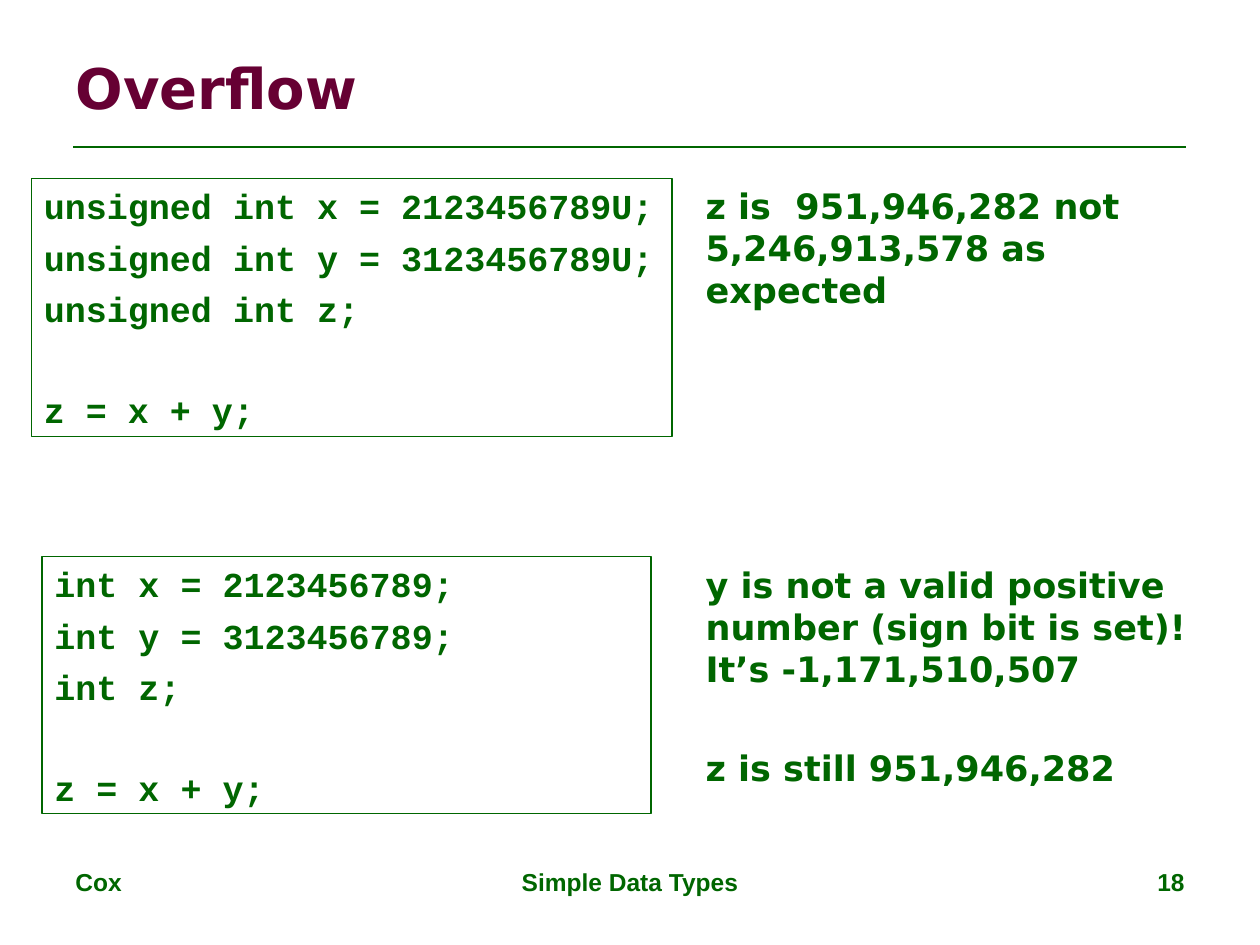
from dataclasses import dataclass

from lxml.etree import SubElement
from pptx import Presentation
from pptx.dml.color import RGBColor
from pptx.enum.shapes import MSO_CONNECTOR, MSO_SHAPE
from pptx.enum.text import MSO_ANCHOR, MSO_AUTO_SIZE, PP_ALIGN
from pptx.oxml.ns import qn
from pptx.util import Pt


@dataclass(frozen=True)
class Theme:
    green: RGBColor = RGBColor(0x00, 0x66, 0x00)
    maroon: RGBColor = RGBColor(0x66, 0x00, 0x33)
    heading_font: str = "DejaVu Sans"
    code_font: str = "Courier New"
    footer_font: str = "Arial"
    title_size: float = 32
    text_size: float = 20
    footer_size: float = 14


@dataclass(frozen=True)
class Box:
    left: float
    top: float
    width: float
    height: float


@dataclass(frozen=True)
class Line:
    text: str
    space_before: float = 0


@dataclass(frozen=True)
class Style:
    font: str
    size: float
    color: RGBColor
    align: PP_ALIGN = PP_ALIGN.LEFT
    anchor: MSO_ANCHOR = MSO_ANCHOR.TOP


@dataclass(frozen=True)
class Listing:
    box: Box
    declarations: tuple[str, ...]
    result: str = "z = x + y;"


THEME = Theme()
TITLE = Style(THEME.heading_font, THEME.title_size, THEME.maroon, anchor=MSO_ANCHOR.MIDDLE)
REMARK = Style(THEME.heading_font, THEME.text_size, THEME.green)
CODE = Style(THEME.code_font, THEME.text_size, THEME.green)

CODE_GAP = 5.5
CODE_BREAK = 33.7
REMARKS = (
    Line("z is  951,946,282 not 5,246,913,578 as expected", 4.7),
    Line("y is not a valid positive number (sign bit is set)! It’s -1,171,510,507", 144.4),
    Line("z is still 951,946,282", 32.6),
)
LISTINGS = (
    Listing(
        Box(18, 102, 366, 147.6),
        ("unsigned int x = 2123456789U;", "unsigned int y = 3123456789U;", "unsigned int z;"),
    ),
    Listing(
        Box(24, 318, 348, 147),
        ("int x = 2123456789;", "int y = 3123456789;", "int z;"),
    ),
)
FOOTERS = (
    ("Cox", 168, PP_ALIGN.LEFT),
    ("Simple Data Types", 228, PP_ALIGN.CENTER),
    ("18", 168, PP_ALIGN.RIGHT),
)
MARGIN = 36
FOOTER_GAP = 42


def lengths(box: Box) -> tuple[Pt, ...]:
    return Pt(box.left), Pt(box.top), Pt(box.width), Pt(box.height)


def move(shape, box: Box) -> None:
    shape.left, shape.top, shape.width, shape.height = lengths(box)


def write(shape, lines: tuple[Line, ...], style: Style) -> None:
    frame = shape.text_frame
    frame.word_wrap = True
    frame.auto_size = MSO_AUTO_SIZE.NONE
    frame.vertical_anchor = style.anchor
    font_values = {"name": style.font, "size": Pt(style.size), "bold": True}
    for index, line in enumerate(lines):
        paragraph = frame.add_paragraph() if index else frame.paragraphs[0]
        paragraph.alignment = style.align
        paragraph.space_before = Pt(line.space_before)
        run = paragraph.add_run()
        run.text = line.text
        for name, value in font_values.items():
            setattr(run.font, name, value)
        run.font.color.rgb = style.color


def remove_bullets(shape) -> None:
    for paragraph in shape.text_frame.paragraphs:
        properties = paragraph._p.get_or_add_pPr()
        for name in ("marL", "indent"):
            properties.set(name, "0")
        SubElement(properties, qn("a:buNone"))


def draw_rule(slide) -> None:
    rule = slide.shapes.add_connector(MSO_CONNECTOR.STRAIGHT, Pt(42), Pt(84), Pt(678), Pt(84))
    rule.line.color.rgb = THEME.green
    rule.line.width = Pt(1.5)
    SubElement(rule._element.spPr, qn("a:effectLst"))


def draw_listing(slide, listing: Listing) -> None:
    frame = slide.shapes.add_shape(MSO_SHAPE.RECTANGLE, *lengths(listing.box))
    frame.shadow.inherit = False
    frame.fill.background()
    frame.line.color.rgb = THEME.green
    frame.line.width = Pt(0.75)
    lines = tuple(Line(text, CODE_GAP) for text in listing.declarations)
    write(frame, lines + (Line(listing.result, CODE_BREAK),), CODE)


def draw_footers(slide) -> None:
    left = MARGIN
    for text, width, align in FOOTERS:
        footer = slide.shapes.add_textbox(*lengths(Box(left, 492, width, 37.5)))
        write(footer, (Line(text),), Style(THEME.footer_font, THEME.footer_size, THEME.green, align))
        left += width + FOOTER_GAP


def main() -> None:
    deck = Presentation()
    deck.slide_width, deck.slide_height = Pt(720), Pt(540)
    slide = deck.slides.add_slide(deck.slide_layouts[1])

    title = slide.shapes.title
    move(title, Box(MARGIN, 21.6, 648, 56))
    write(title, (Line("Overflow"),), TITLE)

    remarks = slide.placeholders[1]
    move(remarks, Box(396, 102, 306, 380))
    write(remarks, REMARKS, REMARK)
    remove_bullets(remarks)

    draw_rule(slide)
    draw_footers(slide)
    for listing in LISTINGS:
        draw_listing(slide, listing)
    deck.save("out.pptx")


if __name__ == "__main__":
    main()
